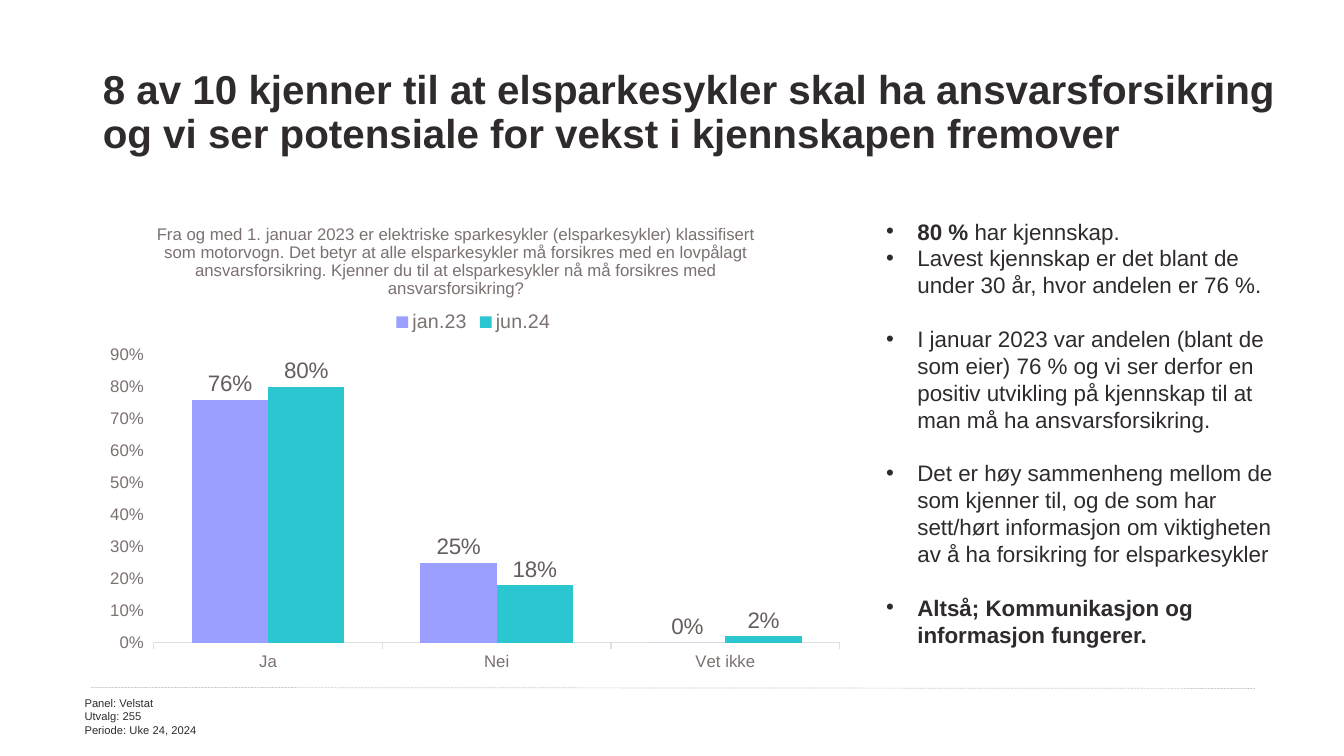
from dataclasses import dataclass

from lxml import etree
from pptx import Presentation
from pptx import util as u
from pptx.chart.data import CategoryChartData
from pptx.dml.color import RGBColor
from pptx.enum import chart as ch, dml, shapes, text
from pptx.oxml.ns import qn

FONT = "Arial"
HUES = {"ink": "2F2B2B", "grey": "7C7171", "label": "665D5D", "axis": "E1DEDE",
        "rule": "BFBFBF", "lilac": "9B9FFF", "teal": "2CC6D0"}


@dataclass
class Run:
    text: str
    bold: bool = False


@dataclass
class Para:
    runs: list[Run]
    gap: float = 0


@dataclass
class Series:
    name: str
    vals: list[float]
    hue: str


@dataclass
class Box:
    left: float
    top: float
    width: float
    height: float

    def lengths(self) -> list[u.Length]:
        return [u.Inches(n) for n in (self.left, self.top, self.width, self.height)]


TITLE = ("8 av 10 kjenner til at elsparkesykler skal ha ansvarsforsikring "
         "og vi ser potensiale for vekst i kjennskapen fremover")
ASKED = ("Fra og med 1. januar 2023 er elektriske sparkesykler (elsparkesykler) klassifisert "
         "som motorvogn. Det betyr at alle elsparkesykler må forsikres med en lovpålagt "
         "ansvarsforsikring. Kjenner du til at elsparkesykler nå må forsikres med "
         "ansvarsforsikring?")
CATS = ["Ja", "Nei", "Vet ikke"]
SERIES = [Series("jan.23", [0.76, 0.25, 0], "lilac"),
          Series("jun.24", [0.8, 0.18, 0.02], "teal")]
POINTS = [
    Para([Run("80 % ", True), Run("har kjennskap.")]),
    Para([Run("Lavest kjennskap er det blant de under 30 år, hvor andelen er 76 %.")]),
    Para([Run("I januar 2023 var andelen (blant de som eier) 76 % og vi ser derfor en "
              "positiv utvikling på kjennskap til at man må ha ansvarsforsikring.")], 19.2),
    Para([Run("Det er høy sammenheng mellom de som kjenner til, og de som har sett/hørt "
              "informasjon om viktigheten av å ha forsikring for elsparkesykler")], 19.2),
    Para([Run("Altså; Kommunikasjon og informasjon fungerer.", True)], 19.2),
]
SOURCE = [Para([Run(line)]) for line in
          ("Panel: Velstat", "Utvalg: 255", "Periode: Uke 24, 2024")]


def rgb(hue: str) -> RGBColor:
    return RGBColor.from_string(HUES[hue])


def style(font, size: float, hue: str = "ink", bold: bool = False) -> None:
    font.name, font.size, font.bold = FONT, u.Pt(size), bold
    font.color.rgb = rgb(hue)


def add_runs(para, runs: list[Run], size: float, hue: str = "ink") -> None:
    for item in runs:
        run = para.add_run()
        run.text = item.text
        style(run.font, size, hue, item.bold)


def add_bullet(para) -> None:
    props = para._p.get_or_add_pPr()
    props.set("marL", str(u.Inches(0.31)))
    props.set("indent", str(-u.Inches(0.31)))
    etree.SubElement(props, qn("a:buFont")).set("typeface", FONT)
    etree.SubElement(props, qn("a:buChar")).set("char", "•")


def add_text(slide, box: Box, paras: list[Para], size: float, bullets: bool = False) -> None:
    frame = slide.shapes.add_textbox(*box.lengths()).text_frame
    frame.word_wrap = True
    for i, item in enumerate(paras):
        para = frame.add_paragraph() if i else frame.paragraphs[0]
        if bullets:
            add_bullet(para)
        if item.gap:
            para.space_before = u.Pt(item.gap)
        add_runs(para, item.runs, size)


def place(part, index: int, **spots: float) -> None:
    """Pin a chart part at fractions of the chart's size."""
    for old in part.findall(qn("c:layout")):
        part.remove(old)
    layout = etree.Element(qn("c:layout"))
    manual = etree.SubElement(layout, qn("c:manualLayout"))
    if "w" in spots:
        etree.SubElement(manual, qn("c:layoutTarget")).set("val", "inner")
    for name in ("xMode", "yMode"):
        etree.SubElement(manual, qn(f"c:{name}")).set("val", "edge")
    for name, val in spots.items():
        etree.SubElement(manual, qn(f"c:{name}")).set("val", str(val))
    part.insert(index, layout)


def add_title(slide) -> None:
    title = slide.shapes.title
    title.left, title.top, title.width, title.height = Box(0.92, 0.4, 12.08, 1.45).lengths()
    frame = title.text_frame
    frame.word_wrap = True
    frame.auto_size = text.MSO_AUTO_SIZE.NONE
    frame.vertical_anchor = text.MSO_ANCHOR.MIDDLE
    para = frame.paragraphs[0]
    para.alignment = text.PP_ALIGN.LEFT
    para.line_spacing = 0.9
    add_runs(para, [Run(TITLE, True)], 28.8)


def add_bars(slide) -> None:
    data = CategoryChartData(number_format="0%")
    data.categories = CATS
    for item in SERIES:
        data.add_series(item.name, item.vals)
    chart = slide.shapes.add_chart(ch.XL_CHART_TYPE.COLUMN_CLUSTERED,
                                   *Box(0.92, 2, 7.56, 4.76).lengths(), data).chart
    style(chart.font, 10)

    add_runs(chart.chart_title.text_frame.paragraphs[0], [Run(ASKED)], 12, "grey")
    chart.chart_title.include_in_layout = False
    chart.has_legend = True
    chart.legend.position = ch.XL_LEGEND_POSITION.TOP
    chart.legend.include_in_layout = False
    style(chart.legend.font, 14, "grey")

    for axis in (chart.category_axis, chart.value_axis):
        axis.has_major_gridlines = False
        axis.major_tick_mark = ch.XL_TICK_MARK.OUTSIDE
        style(axis.tick_labels.font, 12, "grey")
    chart.category_axis.format.line.color.rgb = rgb("axis")
    chart.category_axis.format.line.width = u.Pt(0.75)
    scale = chart.value_axis
    scale.format.line.fill.background()
    scale.minimum_scale, scale.maximum_scale, scale.major_unit = 0, 0.9, 0.1
    scale.tick_labels.number_format = "0%"
    scale.tick_labels.number_format_is_linked = False

    plot = chart.plots[0]
    plot.gap_width, plot.overlap, plot.vary_by_categories = 100, 0, False
    for bars, item in zip(plot.series, SERIES):
        bars.format.fill.solid()
        bars.format.fill.fore_color.rgb = rgb(item.hue)
        bars.invert_if_negative = False
        labels = bars.data_labels
        labels.show_value = True
        labels.number_format, labels.number_format_is_linked = "0%", False
        labels.position = ch.XL_LABEL_POSITION.OUTSIDE_END
        style(labels.font, 16, "label")

    place(chart.chart_title._element, 1, x=0.08, y=0.04)
    place(chart.legend._element, 1, x=0.39, y=0.22)
    place(chart._chartSpace.chart.plotArea, 0, x=0.08, y=0.32, w=0.9, h=0.6)


def add_rule(slide) -> None:
    rule = slide.shapes.add_connector(shapes.MSO_CONNECTOR.STRAIGHT, u.Inches(0.9),
                                      u.Inches(6.82), u.Inches(12.45), u.Inches(6.83))
    rule.line.color.rgb = rgb("rule")
    rule.line.width = u.Pt(0.5)
    rule.line.dash_style = dml.MSO_LINE.ROUND_DOT
    etree.SubElement(rule._element.spPr, qn("a:effectLst"))


def main() -> None:
    deck = Presentation()
    deck.slide_width, deck.slide_height = u.Inches(13.33), u.Inches(7.5)
    slide = deck.slides.add_slide(deck.slide_layouts[5])
    add_rule(slide)
    add_title(slide)
    add_bars(slide)
    add_text(slide, Box(8.69, 2.11, 4.31, 4.95), POINTS, 16, bullets=True)
    add_text(slide, Box(0.74, 6.86, 3.17, 0.5), SOURCE, 8)
    deck.save("out.pptx")


if __name__ == "__main__":
    main()
